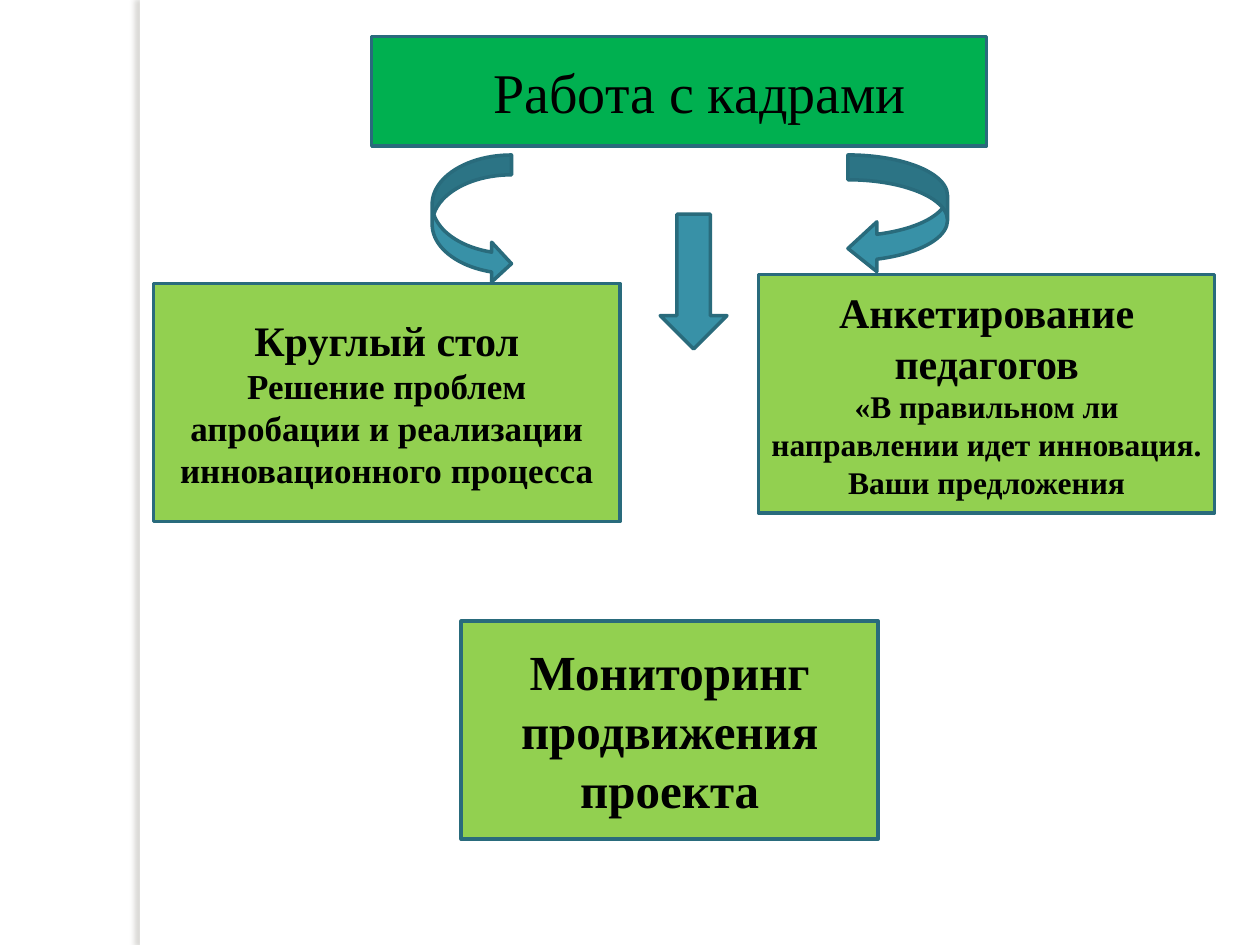
from lxml.etree import SubElement
from pptx import Presentation
from pptx.dml.color import RGBColor
from pptx.enum.shapes import MSO_SHAPE
from pptx.enum.text import MSO_ANCHOR, MSO_AUTO_SIZE, PP_ALIGN
from pptx.oxml.ns import qn
from pptx.util import Inches, Pt

COLORS = {
    "white": "FFFFFF",
    "title": "00B050",
    "card": "92D050",
    "arrow": "3891A7",
    "outline": "296B7C",
    "text": "000000",
    "shade": "736F63",
}
FONT = "Times New Roman"
CELL = Inches(0.1)


def rgb(name):
    """Return the palette colour with the given name."""
    return RGBColor.from_string(COLORS[name])


def cells(*counts):
    """Turn grid columns and rows of a tenth of an inch into lengths."""
    return [int(count * CELL) for count in counts]


def paint(shape, fill, outline="outline"):
    """Give a shape a solid fill and a line, or no line."""
    shape.fill.solid()
    shape.fill.fore_color.rgb = rgb(fill)
    if outline:
        shape.line.color.rgb = rgb(outline)
        shape.line.width = Pt(2)
    else:
        shape.line.fill.background()


def add_preset(page, kind, area, fill, outline="outline"):
    """Add a flat preset shape on the grid."""
    shape = page.shapes.add_shape(kind, *cells(*area))
    shape.shadow.inherit = False
    paint(shape, fill, outline)
    return shape


def write(para, text, size=24, bold=True):
    """Write one centred paragraph."""
    para.alignment = PP_ALIGN.CENTER
    span = para.add_run()
    span.text = text
    span.font.name = FONT
    span.font.size = Pt(size)
    span.font.bold = bold
    span.font.color.rgb = rgb("text")


def prepare_frame(box):
    """Wrap the text of a box and centre it vertically."""
    frame = box.text_frame
    frame.word_wrap = True
    frame.auto_size = MSO_AUTO_SIZE.NONE
    frame.vertical_anchor = MSO_ANCHOR.MIDDLE
    return frame


def add_card(page, area, *lines):
    """Add a green card holding (text, size) paragraphs."""
    box = add_preset(page, MSO_SHAPE.RECTANGLE, area, "card")
    frame = prepare_frame(box)
    for index, (text, size) in enumerate(lines):
        para = frame.add_paragraph() if index else frame.paragraphs[0]
        write(para, text, size=size)


def add_side_strip(page):
    """Add the white strip whose shadow falls to the left."""
    strip = add_preset(page, MSO_SHAPE.RECTANGLE, (11.1, 0, 0.8, 75), "white", None)
    effects = strip.element.spPr.find(qn("a:effectLst"))
    shadow = SubElement(effects, qn("a:outerShdw"), blurRad=str(Pt(3)),
                        dist=str(Pt(3)), dir="10800000", rotWithShape="0")
    color = SubElement(shadow, qn("a:srgbClr"), val=COLORS["shade"])
    SubElement(color, qn("a:alpha"), val="25000")


def format_title(page, text):
    """Place and format the title banner."""
    title = page.shapes.title
    title.left, title.top, title.width, title.height = cells(29.5, 2.9, 48.8, 8.7)
    paint(title, "title")
    frame = prepare_frame(title)
    frame.margin_left = Inches(0.43)
    write(frame.paragraphs[0], text, size=32, bold=False)


def main():
    """Build the slide and save the deck."""
    deck = Presentation()
    deck.slide_width, deck.slide_height = cells(100, 75)
    page = deck.slides.add_slide(deck.slide_layouts[5])

    add_side_strip(page)
    format_title(page, "Работа с кадрами")
    add_card(page, (36.6, 49.3, 33.1, 17.3), ("Мониторинг продвижения проекта", 28))
    add_card(page, (60.2, 21.8, 36.2, 18.9),
             ("Анкетирование педагогов", 24),
             ("«В правильном ли направлении идет инновация. Ваши предложения", 18))
    add_card(page, (12.2, 22.5, 37, 18.9),
             ("Круглый стол", 24),
             ("Решение проблем апробации и реализации инновационного процесса", 20))

    add_preset(page, MSO_SHAPE.CURVED_RIGHT_ARROW, (34.3, 12.3, 6.3, 10.2), "arrow")
    left_arrow = add_preset(page, MSO_SHAPE.CURVED_LEFT_ARROW,
                            (67.3, 12.3, 7.9, 9.4), "arrow")
    left_arrow.adjustments[2] = 0.29
    add_preset(page, MSO_SHAPE.DOWN_ARROW, (52.4, 17, 5.3, 10.7), "arrow")

    deck.save("out.pptx")


if __name__ == "__main__":
    main()
